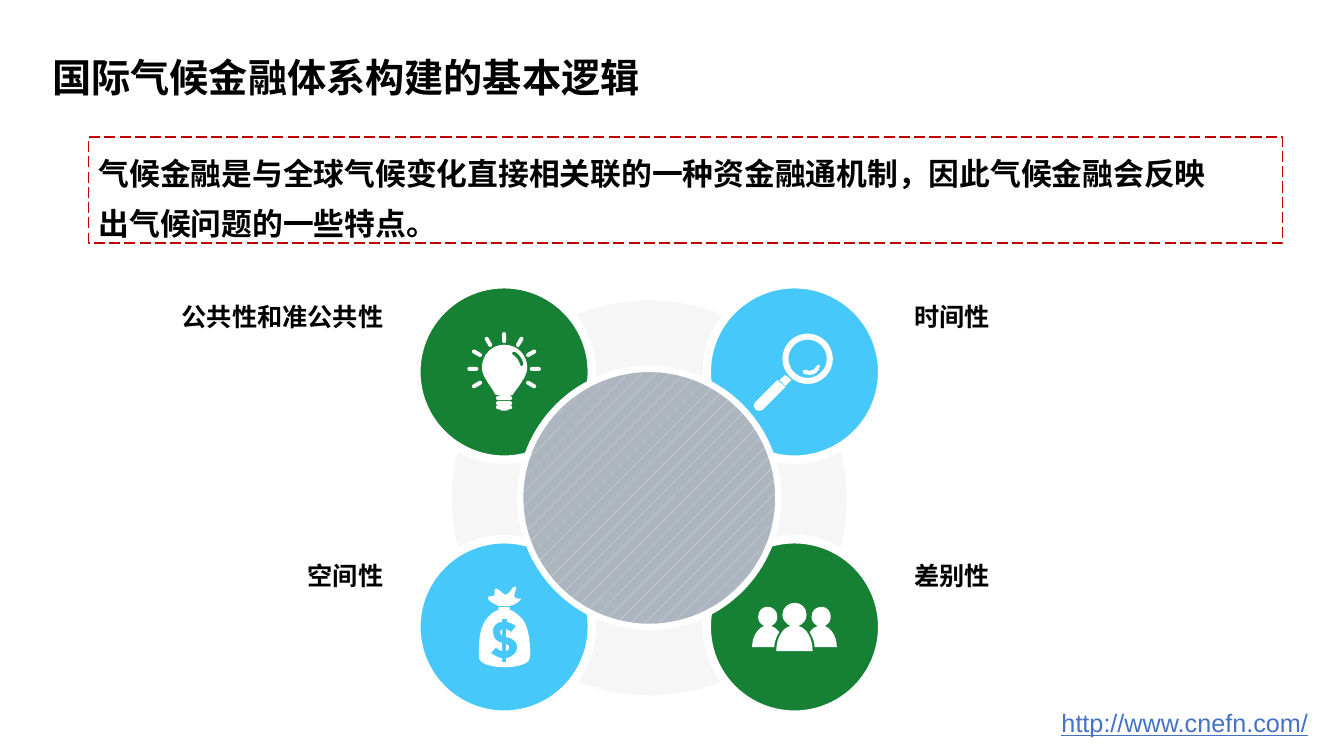
from math import cos, radians, sin

from lxml import etree
from pptx import Presentation
from pptx.dml.color import RGBColor
from pptx.enum.dml import MSO_LINE, MSO_PATTERN
from pptx.enum.shapes import MSO_SHAPE
from pptx.enum.text import MSO_ANCHOR, PP_ALIGN
from pptx.oxml.ns import qn
from pptx.util import Inches, Pt

# Content
TITLE = "国际气候金融体系构建的基本逻辑"
SUMMARY = ["气候金融是与全球气候变化直接相关联的一种资金融通机制，因此气候金融会反映",
           "出气候问题的一些特点。"]
ADDRESS = "http://www.cnefn.com/"
LABELS = [["公共性和准公共性", "时间性"], ["空间性", "差别性"]]

# Colours and fonts
WHITE = RGBColor(0xFF, 0xFF, 0xFF)
BLACK = RGBColor(0, 0, 0)
RED = RGBColor(0xC0, 0, 0)
LINK_BLUE = RGBColor(0x44, 0x72, 0xC4)
GREEN = RGBColor(0x16, 0x81, 0x35)
SKY = RGBColor(0x47, 0xC8, 0xFA)
PALE = RGBColor(0xF2, 0xF2, 0xF2)
STRIPE = RGBColor(0xE4, 0xE6, 0xEA)
GREY = RGBColor(0xAD, 0xB5, 0xBF)
LATIN, CHINESE = "Arial", "Noto Sans CJK SC"

# Places, in inches
CIRCLE_LEFTS, CIRCLE_TOPS, CIRCLE_SIZE = (4.13, 7.01), (2.82, 5.35), 1.74
LABEL_LEFTS, LABEL_TOPS = (0.5, 8.97), (2.89, 5.46)

# Icon contours: a start point, then lines (x, y) or curves (two controls and an end)
BULB_GLASS = [(5, 3.42), (5.13, 3.42, 5.23, 3.52, 5.23, 3.65), (5.23, 3.74, 5.12, 3.86, 5.09, 3.91),
              (5.09, 3.94, 4.92, 3.93, 4.91, 3.91), (4.88, 3.84, 4.78, 3.74, 4.78, 3.65),
              (4.78, 3.52, 4.88, 3.42, 5, 3.42)]
BULB_GLINT = [(5.09, 3.49), (5.09, 3.49, 5.08, 3.49, 5.08, 3.5), (5.08, 3.51, 5.08, 3.52, 5.09, 3.52),
              (5.12, 3.54, 5.15, 3.58, 5.16, 3.62), (5.16, 3.63, 5.17, 3.64, 5.18, 3.63),
              (5.19, 3.63, 5.19, 3.61, 5.19, 3.6), (5.18, 3.55, 5.14, 3.51, 5.11, 3.49)]
BULB_TIP = [(4.95, 4.06), (5.05, 4.06), (5.04, 4.08, 4.96, 4.08, 4.95, 4.06)]
HANDLE = [(7.71, 3.77), (7.79, 3.84), (7.57, 4.06), (7.55, 4.08, 7.51, 4.08, 7.49, 4.06),
          (7.47, 4.04, 7.47, 4.01, 7.49, 3.99)]
HANDLE_NECK = [(7.79, 3.72), (7.85, 3.77), (7.79, 3.83), (7.73, 3.77)]
LENS_GLINT = [(8.12, 3.62), (8.13, 3.62, 8.14, 3.63, 8.13, 3.64), (8.12, 3.69, 8.08, 3.72, 8.03, 3.72),
              (8.01, 3.72, 7.99, 3.71, 7.97, 3.71), (7.96, 3.7, 7.96, 3.69, 7.96, 3.68),
              (7.97, 3.67, 7.98, 3.67, 7.98, 3.67), (8, 3.68, 8.01, 3.68, 8.03, 3.68),
              (8.06, 3.68, 8.09, 3.66, 8.1, 3.63), (8.11, 3.62, 8.12, 3.62, 8.12, 3.62)]
SACK = [(4.94, 6.05), (5.06, 6.05), (5.2, 6.12, 5.22, 6.19, 5.25, 6.33), (5.25, 6.37, 5.26, 6.42, 5.26, 6.47),
        (5.26, 6.51, 5.25, 6.55, 5.24, 6.56), (5.2, 6.6, 5.1, 6.62, 5, 6.62),
        (4.91, 6.62, 4.81, 6.6, 4.77, 6.56), (4.75, 6.55, 4.75, 6.51, 4.75, 6.47),
        (4.75, 6.29, 4.77, 6.13, 4.94, 6.05)]
SACK_NECK = [(4.96, 6.02), (5.03, 6.02), (5.04, 6.02, 5.05, 6.03, 5.06, 6.03), (5.06, 6.04), (5.04, 6.05),
             (4.96, 6.05), (4.94, 6.04), (4.94, 6.03)]
RUFFLE = [(5.11, 5.82), (5.15, 5.82, 5.05, 5.94, 5.14, 5.94), (5.17, 5.94),
          (5.15, 5.97, 5.11, 6, 5.06, 6.01), (4.94, 6.01), (4.92, 6, 4.83, 5.96, 4.84, 5.93),
          (4.84, 5.91, 4.88, 5.92, 4.9, 5.91), (4.92, 5.89, 4.89, 5.84, 4.92, 5.84),
          (4.95, 5.84, 5, 5.91, 5.02, 5.9), (5.08, 5.87, 5.07, 5.82, 5.11, 5.82)]
DOLLAR = [(4.98, 6.14), (4.98, 6.17), (4.95, 6.17, 4.93, 6.18, 4.91, 6.2), (4.89, 6.22, 4.89, 6.24, 4.89, 6.27),
          (4.89, 6.3, 4.9, 6.32, 4.91, 6.34), (4.93, 6.36, 4.95, 6.37, 4.98, 6.38), (4.98, 6.46),
          (4.95, 6.46, 4.94, 6.44, 4.92, 6.42), (4.87, 6.48), (4.88, 6.49, 4.9, 6.5, 4.92, 6.51),
          (4.94, 6.52, 4.96, 6.53, 4.98, 6.53), (4.98, 6.57), (5.02, 6.57), (5.02, 6.53),
          (5.06, 6.52, 5.08, 6.51, 5.1, 6.49), (5.12, 6.47, 5.13, 6.45, 5.13, 6.42),
          (5.13, 6.37, 5.09, 6.33, 5.02, 6.32), (5.02, 6.24), (5.04, 6.25, 5.05, 6.26, 5.07, 6.27),
          (5.12, 6.21), (5.09, 6.19, 5.06, 6.18, 5.03, 6.17), (5.03, 6.14)]
DOLLAR_LOOPS = [[(5.02, 6.39), (5.04, 6.4, 5.05, 6.41, 5.05, 6.42), (5.05, 6.44, 5.04, 6.45, 5.02, 6.46)],
                [(4.98, 6.24), (4.98, 6.31), (4.97, 6.3, 4.96, 6.29, 4.96, 6.27),
                 (4.96, 6.26, 4.97, 6.25, 4.98, 6.24)]]
SIDE_PERSON = [(7.61, 6.02), (7.67, 6.02, 7.71, 6.06, 7.71, 6.12), (7.71, 6.16, 7.69, 6.19, 7.65, 6.21),
               (7.68, 6.22, 7.71, 6.24, 7.73, 6.27), (7.7, 6.32, 7.68, 6.37, 7.68, 6.42), (7.46, 6.42),
               (7.46, 6.31, 7.52, 6.23, 7.58, 6.21), (7.54, 6.19, 7.52, 6.16, 7.52, 6.12),
               (7.52, 6.06, 7.56, 6.02, 7.61, 6.02)]
FRONT_PERSON = [(7.88, 5.98), (7.95, 5.98, 8, 6.03, 8, 6.1), (8, 6.15, 7.97, 6.19, 7.92, 6.21),
                (8, 6.23, 8.06, 6.33, 8.06, 6.46), (7.7, 6.46), (7.7, 6.33, 7.76, 6.23, 7.84, 6.21),
                (7.8, 6.19, 7.76, 6.15, 7.76, 6.1), (7.76, 6.03, 7.82, 5.98, 7.88, 5.98)]

deck = Presentation()
deck.slide_width, deck.slide_height = Inches(13.33), Inches(7.5)
page = deck.slides.add_slide(deck.slide_layouts[6])


def preset(kind, left, top, width, height, fill=None, line=None, weight=1, alpha=None):
    shape = page.shapes.add_shape(kind, Inches(left), Inches(top), Inches(width), Inches(height))
    shape.shadow.inherit = False
    shape.fill.background()
    shape.line.fill.background()
    if fill is not None:
        shape.fill.solid()
        shape.fill.fore_color.rgb = fill
    if line is not None:
        shape.line.color.rgb = line
        shape.line.width = Pt(weight)
    if alpha:
        color = shape._element.spPr.find(qn("a:solidFill"))[0]
        etree.SubElement(color, qn("a:alpha")).set("val", str(alpha * 1000))
    return shape


def icon(contours):
    """Draw all contours as one white outline; inner contours become holes."""
    start = contours[0][0]
    builder = page.shapes.build_freeform(Inches(start[0]), Inches(start[1]), scale=1.0)
    for number, (first, *steps) in enumerate(contours):
        if number:
            builder.move_to(Inches(first[0]), Inches(first[1]))
        points = [step[i:i + 2] for step in steps for i in range(0, len(step), 2)]
        builder.add_line_segments([(Inches(x), Inches(y)) for x, y in points], close=True)
    shape = builder.convert_to_shape()
    shape.shadow.inherit = False
    shape.fill.solid()
    shape.fill.fore_color.rgb = WHITE
    shape.line.fill.background()
    # Join each three points of a curve into one Bezier segment
    segments = iter(list(shape._element.iter(qn("a:lnTo"))))
    for step in [step for contour in contours for step in contour[1:]]:
        segment = next(segments)
        if len(step) == 6:
            segment.tag = qn("a:cubicBezTo")
            for other in (next(segments), next(segments)):
                segment.append(other[0])
                other.getparent().remove(other)


def circle(x, y, r):
    k = 0.55 * r
    return [(x, y - r), (x + k, y - r, x + r, y - k, x + r, y), (x + r, y + k, x + k, y + r, x, y + r),
            (x - k, y + r, x - r, y + k, x - r, y), (x - r, y - k, x - k, y - r, x, y - r)]


def bar(x, y, length, width, angle=0):
    """A round-ended bar about its middle, turned by the angle."""
    c, s = cos(radians(angle)), sin(radians(angle))
    r = width / 2
    a, b = length / 2 - r, length / 2 + r / 3
    steps = [(-a, -r), (a, -r), (b, -r, b, r, a, r), (-a, r), (-b, r, -b, -r, -a, -r)]
    return [tuple(value for i in range(0, len(step), 2)
                  for value in (x + step[i] * c - step[i + 1] * s, y + step[i] * s + step[i + 1] * c))
            for step in steps]


def mirror(contour, axis):
    return [tuple(value if i % 2 else 2 * axis - value for i, value in enumerate(step)) for step in contour]


def write(frame, lines, size, color=BLACK, bold=True, latin=LATIN, align=None, spacing=None):
    frame.text = "\n".join(lines)
    for para in frame.paragraphs:
        para.alignment, para.line_spacing = align, spacing
        for span in para.runs:
            font = span.font
            font.size, font.bold, font.name = Pt(size), bold, latin
            font.color.rgb = color
            etree.SubElement(font._element, qn("a:ea")).set("typeface", CHINESE)


def text_box(left, top, width, height, line, size, anchor, wrap=True, **style):
    box = page.shapes.add_textbox(Inches(left), Inches(top), Inches(width), Inches(height))
    frame = box.text_frame
    frame.word_wrap, frame.vertical_anchor = wrap, anchor
    write(frame, [line], size, **style)
    return frame


# Backdrop, address, heading and summary
preset(MSO_SHAPE.RECTANGLE, 0, 0, 13.33, 7.5, WHITE, alpha=90)
address = text_box(10.43, 6.97, 2.74, 0.4, ADDRESS, 18, MSO_ANCHOR.TOP, False, color=LINK_BLUE, bold=False)
address.paragraphs[0].runs[0].font.underline = True
text_box(0.42, 0.25, 8.21, 0.79, TITLE, 28, MSO_ANCHOR.BOTTOM)
summary = preset(MSO_SHAPE.RECTANGLE, 0.88, 1.36, 11.84, 1.05, None, RED)
summary.line.dash_style = MSO_LINE.LONG_DASH
summary.text_frame.word_wrap = True
summary.text_frame.vertical_anchor = MSO_ANCHOR.TOP
write(summary.text_frame, SUMMARY, 22, latin=CHINESE, align=PP_ALIGN.JUSTIFY, spacing=1.35)

# Ring, four circles with labels, centre
preset(MSO_SHAPE.OVAL, 4.45, 2.95, 3.98, 3.98, PALE, WHITE, 4.5, alpha=67)
for row, names in enumerate(LABELS):
    for column, name in enumerate(names):
        preset(MSO_SHAPE.OVAL, CIRCLE_LEFTS[column], CIRCLE_TOPS[row], CIRCLE_SIZE, CIRCLE_SIZE,
               GREEN if row == column else SKY, WHITE, 6)
        text_box(LABEL_LEFTS[column], LABEL_TOPS[row], 3.4, 0.49, name, 18, MSO_ANCHOR.MIDDLE,
                 align=PP_ALIGN.LEFT if column else PP_ALIGN.RIGHT)
hub = preset(MSO_SHAPE.OVAL, 5.16, 3.66, 2.56, 2.56, GREY, WHITE, 4.5)
hub.fill.patterned()
hub.fill.pattern = MSO_PATTERN.PERCENT_5
hub.fill.fore_color.rgb, hub.fill.back_color.rgb = STRIPE, GREY

# Icons: people, money bag, light bulb, magnifier
icon([SIDE_PERSON, mirror(SIDE_PERSON, 7.88), FRONT_PERSON])
icon([SACK, SACK_NECK, RUFFLE, DOLLAR, *DOLLAR_LOOPS])
rays = [bar(5 + 0.31 * cos(radians(a)), 3.66 + 0.31 * sin(radians(a)), 0.11, 0.04, a)
        for a in range(-210, 31, 30)]
screw = [bar(5, y, 0.16, 0.04) for y in (3.95, 4, 4.04)]
icon([BULB_GLASS, BULB_GLINT, BULB_TIP, *screw, *rays])
icon([HANDLE, HANDLE_NECK, LENS_GLINT, circle(8.01, 3.56, 0.19), circle(8.01, 3.56, 0.25)])

deck.save("out.pptx")
